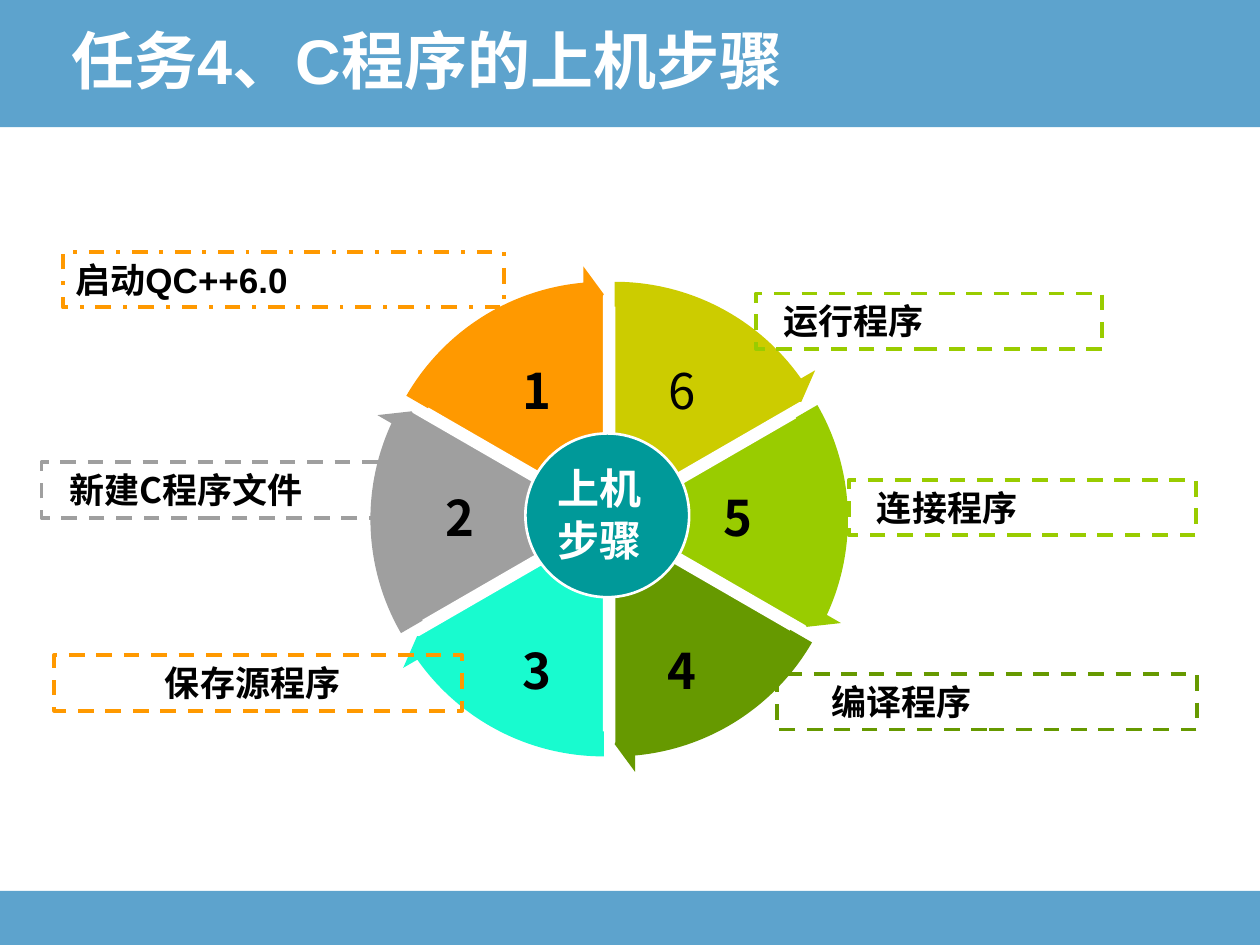
"""Build a slide showing the six steps of running a C program as a wheel."""
import math
from lxml import etree
from pptx import Presentation
from pptx import util as u
from pptx.dml.color import RGBColor
from pptx.enum import dml, shapes, text
from pptx.oxml import ns

HUES = {"bar": "5DA3CD", "orange": "FF9900", "olive": "CCCC00", "lime": "99CC00",
        "green": "669900", "aqua": "18FBCF", "gray": "9F9F9F", "teal": "009999",
        "white": "FFFFFF", "black": "000000"}
CJK = "Noto Sans CJK SC"
KIND = shapes.MSO_SHAPE
DASH = dml.MSO_LINE


def draw(kind, box, fill=None, line=None, width=1):
    item = slide.shapes.add_shape(kind, *[u.Inches(n) for n in box])
    item.shadow.inherit = False
    if fill:
        item.fill.solid()
        item.fill.fore_color.rgb = RGBColor.from_string(HUES[fill])
    else:
        item.fill.background()
    if line:
        item.line.color.rgb = RGBColor.from_string(HUES[line])
        item.line.width = u.Pt(width)
    else:
        item.line.fill.background()
    return item


def style(frame, size, hue, face=CJK, bold=True, align=text.PP_ALIGN.LEFT):
    for para in frame.paragraphs:
        para.alignment = align
        for run in para.runs:
            run.font.size = u.Pt(size)
            run.font.bold = bold
            run.font.name = face
            run.font.color.rgb = RGBColor.from_string(HUES[hue])
            east = etree.SubElement(run.font._element, ns.qn("a:ea"))
            east.set("typeface", CJK)


deck = Presentation()
deck.slide_width, deck.slide_height = u.Inches(10), u.Inches(7.5)
slide = deck.slides.add_slide(deck.slide_layouts[5])

draw(KIND.RECTANGLE, (0, 0, 10, 1.01), "bar")
draw(KIND.RECTANGLE, (0, 7.07, 10, 0.43), "bar")

title = slide.shapes.title
title.left, title.top = u.Inches(0.47), u.Inches(0.1)
title.width, title.height = u.Inches(9.07), u.Inches(0.73)
title.text_frame.text = "任务4、C程序的上机步骤"
title.text_frame.auto_size = text.MSO_AUTO_SIZE.NONE
title.text_frame.vertical_anchor = text.MSO_ANCHOR.BOTTOM
title.text_frame.paragraphs[0].line_spacing = 0.9
style(title.text_frame, 36, "white", "Arial")
slide.shapes._spTree.append(title._element)

steps = [("6", "olive", 5.41, 3.12), ("5", "lime", 5.86, 4.13),
         ("4", "green", 5.41, 5.35), ("3", "aqua", 4.26, 5.35),
         ("2", "gray", 3.65, 4.13), ("1", "orange", 4.26, 3.12)]
labels = [("启动QC++6.0", "orange", (0.5, 2, 3.5, 0.44), 0.1, DASH.DASH_DOT, "Arial"),
          ("新建C程序文件", "gray", (0.33, 3.67, 2.74, 0.44), 0.22, DASH.DASH, CJK),
          ("连接程序", "lime", (6.74, 3.81, 2.75, 0.44), 0.22, DASH.DASH, "Arial"),
          ("保存源程序", "orange", (0.43, 5.2, 3.24, 0.44), 0.88, DASH.DASH, "Arial"),
          ("编译程序", "green", (6.17, 5.35, 3.33, 0.44), 0.43, DASH.DASH, "Arial"),
          ("运行程序", "lime", (6, 2.33, 2.75, 0.44), 0.22, DASH.DASH, "Arial")]

for place, (words, hue, box, inset, dash, face) in enumerate(labels):
    label = draw(KIND.RECTANGLE, box, None, hue, 2.25)
    label.line.dash_style = dash
    frame = label.text_frame
    frame.text = words
    frame.word_wrap = True
    frame.vertical_anchor = text.MSO_ANCHOR.TOP
    frame.margin_left = u.Inches(inset)
    style(frame, 20, "black", face)
    if place:
        continue

    arrows = []
    for turn, (digit, shade, x, y) in enumerate(steps):
        start = (270 + 60 * turn) % 360
        mid = math.radians(start + 30)
        left = 3.11 + 0.085 * math.cos(mid)
        top = 2.395 + 0.085 * math.sin(mid)
        slice = draw(KIND.PIE, (left, top, 3.45, 3.45), shade, "white")
        slice.adjustments[0] = start * 0.6
        slice.adjustments[1] = (start + 60) % 360 * 0.6
        arrows.append((left - 0.215, top - 0.215, start * 0.6, shade))
        number = slide.shapes.add_textbox(u.Inches(x - 0.45), u.Inches(y - 0.35),
                                          u.Inches(0.9), u.Inches(0.7))
        frame = number.text_frame
        frame.text = digit
        frame.word_wrap = True
        frame.vertical_anchor = text.MSO_ANCHOR.MIDDLE
        frame.margin_top = frame.margin_bottom = u.Inches(0.04)
        frame.paragraphs[0].line_spacing = 0.9
        style(frame, 28, "black", bold=digit != "6", align=text.PP_ALIGN.CENTER)

    for left, top, start, shade in arrows:
        arrow = draw(KIND.CIRCULAR_ARROW, (left, top, 3.88, 3.88), shade)
        for spot, value in enumerate((0.051, 3.275, (start + 32.725) % 216, start, 0.059)):
            arrow.adjustments[spot] = value

draw(KIND.OVAL, (4.17, 3.44, 1.3, 1.3), "teal", "white", 1.5)
hub = slide.shapes.add_textbox(u.Inches(4.33), u.Inches(3.77), u.Inches(0.95), u.Inches(0.81))
hub.text_frame.text = "上机\n步骤"
hub.text_frame.word_wrap = True
for para in hub.text_frame.paragraphs:
    para.line_spacing = u.Pt(18)
hub.text_frame.paragraphs[1].space_before = u.Pt(12)
style(hub.text_frame, 24, "white")

deck.save("out.pptx")
